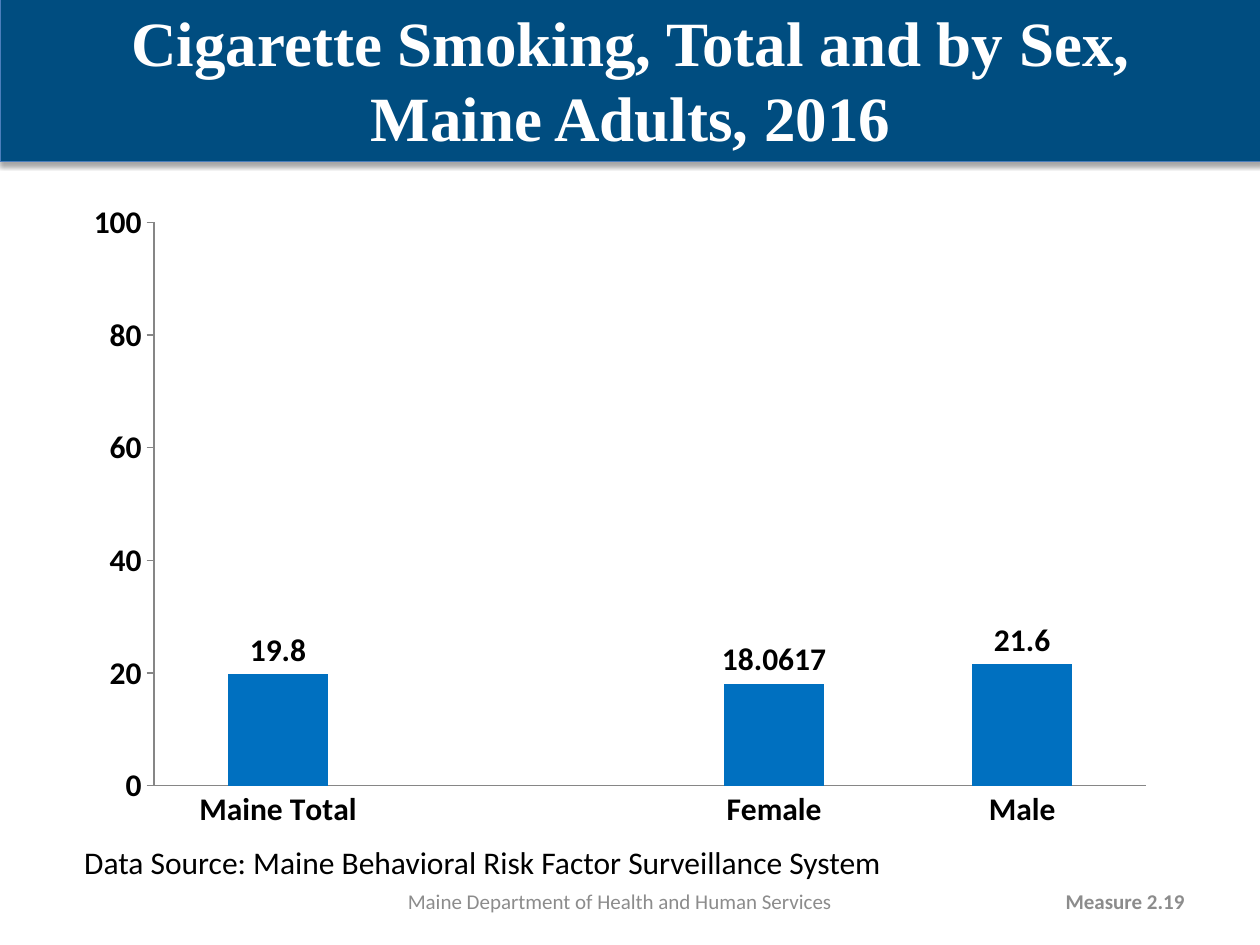
import pptx
import pptx.chart.data
import pptx.dml.color
import pptx.enum.chart
import pptx.enum.shapes
import pptx.enum.text
import pptx.oxml
import pptx.util

Inches = pptx.util.Inches
Pt = pptx.util.Pt
ALIGN = pptx.enum.text.PP_ALIGN
ANCHOR = pptx.enum.text.MSO_ANCHOR

COLORS = {
    "banner": "004D80",
    "edge": "4B7EBC",
    "bar": "0070C0",
    "white": "FFFFFF",
    "black": "000000",
    "footer": "8C8C8C",
    "axis": "868686",
}

SHADOW = (
    '<a:effectLst xmlns:a="http://schemas.openxmlformats.org/drawingml/2006/main">'
    '<a:outerShdw blurRad="{blur}" dist="{dist}" dir="5400000" rotWithShape="0">'
    '<a:srgbClr val="{color}"><a:alpha val="35000"/></a:srgbClr>'
    "</a:outerShdw></a:effectLst>"
)


def color(name):
    return pptx.dml.color.RGBColor.from_string(COLORS[name])


def style(font, size, tint, bold=False, face="Calibri"):
    font.size = Pt(size)
    font.name = face
    font.bold = bold
    font.color.rgb = color(tint)


def write(shape, text, align=ALIGN.LEFT, anchor=ANCHOR.MIDDLE, **form):
    frame = shape.text_frame
    frame.word_wrap = True
    frame.vertical_anchor = anchor
    para = frame.paragraphs[0]
    para.text = text
    para.alignment = align
    for run in para.runs:
        style(run.font, **form)


def add_text(slide, box, text, **form):
    shape = slide.shapes.add_textbox(*map(Inches, box))
    write(shape, text, **form)


def add_banner(slide, box, text):
    kind = pptx.enum.shapes.MSO_SHAPE.RECTANGLE
    shape = slide.shapes.add_shape(kind, *map(Inches, box))
    shape.fill.solid()
    shape.fill.fore_color.rgb = color("banner")
    shape.line.color.rgb = color("edge")
    shape.line.width = Pt(0.75)
    glow = SHADOW.format(blur=Pt(3.1), dist=Pt(1.8), color=COLORS["black"])
    shape._element.spPr.append(pptx.oxml.parse_xml(glow))
    write(shape, text, align=ALIGN.CENTER, size=36, tint="white",
          bold=True, face="Times New Roman")


def add_bars(slide, box, cats, vals):
    enums = pptx.enum.chart
    data = pptx.chart.data.CategoryChartData()
    data.categories = cats
    data.add_series("Series 1", vals)
    kind = enums.XL_CHART_TYPE.COLUMN_CLUSTERED
    chart = slide.shapes.add_chart(kind, *map(Inches, box), data).chart
    chart.has_legend = False
    chart.has_title = False
    style(chart.font, 18, "black", bold=True)

    for axis in (chart.category_axis, chart.value_axis):
        axis.has_major_gridlines = False
        axis.format.line.color.rgb = color("axis")
        axis.format.line.width = Pt(0.75)
    chart.category_axis.major_tick_mark = enums.XL_TICK_MARK.NONE
    scale = chart.value_axis
    scale.major_tick_mark = enums.XL_TICK_MARK.OUTSIDE
    scale.minimum_scale, scale.maximum_scale, scale.major_unit = 0, 100, 20
    scale.tick_labels.number_format = "0"
    scale.tick_labels.number_format_is_linked = False

    plot = chart.plots[0]
    plot.gap_width = 150
    plot.vary_by_categories = False
    bars = plot.series[0]
    bars.format.fill.solid()
    bars.format.fill.fore_color.rgb = color("bar")
    labels = bars.data_labels
    labels.show_value = True
    labels.position = enums.XL_LABEL_POSITION.OUTSIDE_END
    style(labels.font, 18, "black", bold=True)


def main():
    deck = pptx.Presentation()
    deck.slide_width, deck.slide_height = Inches(10), Inches(7.5)
    slide = deck.slides.add_slide(deck.slide_layouts[6])

    add_banner(slide, (0, -0.03, 10.01, 1.31),
               "Cigarette Smoking, Total and by Sex,\vMaine Adults, 2016")
    add_text(slide, (7.17, 6.95, 2.33, 0.4), "Measure 2.19",
             align=ALIGN.RIGHT, size=12, tint="footer", bold=True)
    add_text(slide, (2.92, 6.95, 4, 0.4),
             "Maine Department of Health and Human Services",
             align=ALIGN.CENTER, size=12, tint="footer")
    add_bars(slide, (0.57, 1.51, 8.7, 5.17),
             ["Maine Total", "", "Female", "Male"],
             [19.8, None, 18.0617, 21.6])
    add_text(slide, (0.57, 6.64, 7, 0.4),
             "Data Source: Maine Behavioral Risk Factor Surveillance System",
             anchor=ANCHOR.TOP, size=18, tint="black")

    deck.save("out.pptx")


if __name__ == "__main__":
    main()
